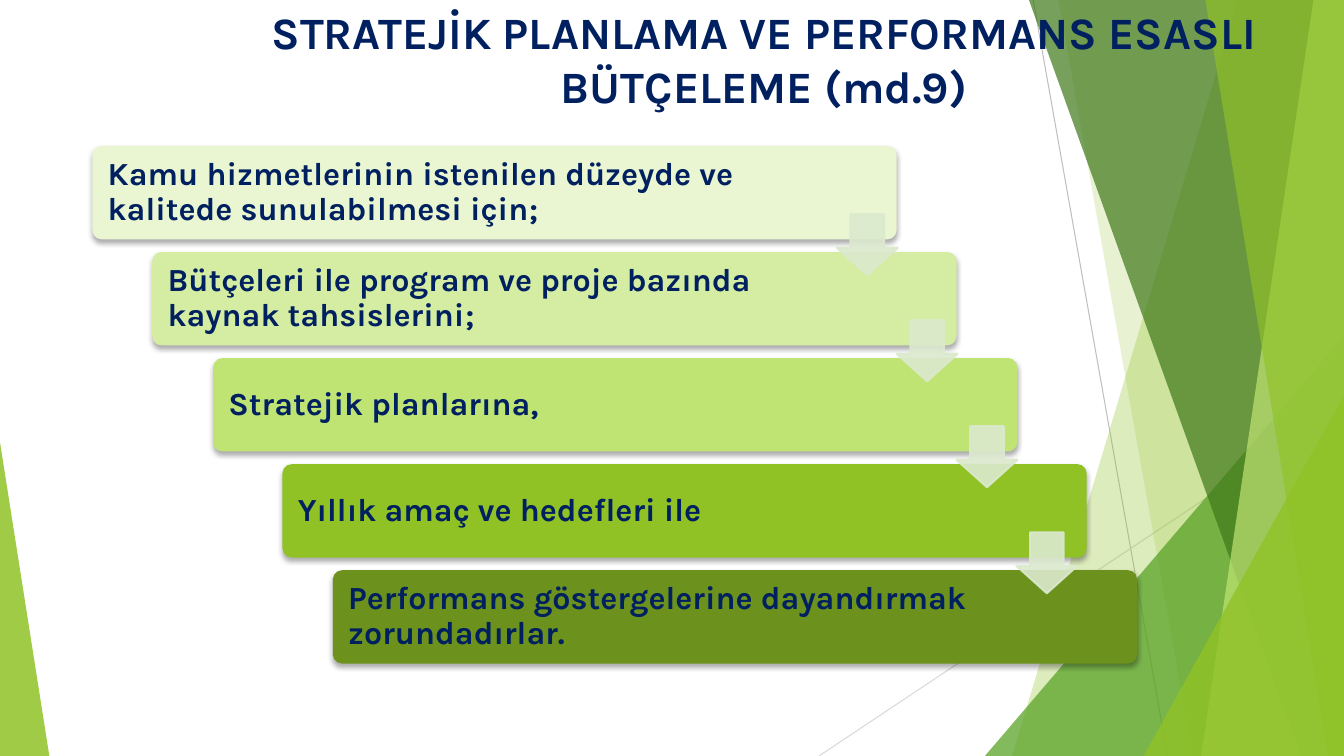
"""Build the slide on strategic planning and performance-based budgeting."""
from lxml import etree
from pptx import Presentation
from pptx.dml.color import RGBColor
from pptx.enum.shapes import MSO_CONNECTOR, MSO_SHAPE
from pptx.enum.text import MSO_ANCHOR, MSO_AUTO_SIZE, PP_ALIGN
from pptx.oxml.ns import qn
from pptx.util import Pt

PX = 9525
WIDTH, HEIGHT = 1280, 720
FONT = "Karla"
STRAIGHT = MSO_CONNECTOR.STRAIGHT
TRIANGLE = MSO_SHAPE.ISOSCELES_TRIANGLE
ROUNDED = MSO_SHAPE.ROUNDED_RECTANGLE
DOWN_ARROW = MSO_SHAPE.DOWN_ARROW
TOP, MIDDLE = MSO_ANCHOR.TOP, MSO_ANCHOR.MIDDLE
LEFT, CENTER = PP_ALIGN.LEFT, PP_ALIGN.CENTER
FIXED = MSO_AUTO_SIZE.NONE

COLORS = {
    "navy": "002060", "gray": "BFBFBF", "silver": "D9D9D9", "black": "000000",
    "lime": "90C226", "green": "54A021", "forest": "3F7819", "arrow": "DBE9CD",
    "pale": "EAF6D1", "light": "D5EDA2", "soft": "C0E474", "olive": "6C921D",
}

TITLE = "STRATEJİK PLANLAMA VE PERFORMANS ESASLI BÜTÇELEME (md.9)"
STEPS = [
    ("Kamu hizmetlerinin istenilen düzeyde ve kalitede sunulabilmesi için;", 88, "pale"),
    ("Bütçeleri ile program ve proje bazında kaynak tahsislerini;", 145, "light"),
    ("Stratejik planlarına,", 203, "soft"),
    ("Yıllık amaç ve hedefleri ile", 269, "lime"),
    ("Performans göstergelerine dayandırmak zorundadırlar.", 317, "olive"),
]
STEP_TOP, STEP_WIDTH, STEP_HEIGHT, STEP_PITCH = 139, 766, 89, 101
TEXT_INSET, TEXT_WIDTH = 12, 627
ARROW_LEFT, ARROW_TOP, ARROW_SIZE, ARROW_SHIFT = 797, 204, 58, 57

THIN_LINES = [((984, 0), (1112, 720), "gray"), ((1280, 387), (780, 720), "silver")]
BACKDROP = [
    ("band", (1179, 964), "lime", 30),
    ("band", (1008, 1136), "lime", 20),
    ("triangle", (938, 320, 342, 400, 1), "green", 72),
    ("band", (980, 1239), "forest", 70),
    ("band", (1251, 1144), "soft", 70),
    ("band", (1148, 1265), "lime", 65),
    ("triangle", (1089, 377, 191, 343, 1), "lime", 80),
    ("triangle", (0, 421, 47, 299, 0), "lime", 85),
]


def rgb(name):
    return RGBColor.from_string(COLORS[name])


def scaled(*lengths):
    return [length * PX for length in lengths]


def set_opacity(shape, percent):
    for color in shape.element.spPr.iter(qn("a:srgbClr")):
        etree.SubElement(color, qn("a:alpha"), val=str(percent * 1000))


def paint(shape, color):
    shape.shadow.inherit = False
    shape.fill.solid()
    shape.fill.fore_color.rgb = rgb(color)
    shape.line.fill.background()


def add_preset(page, kind, bounds, color, adjustments):
    shape = page.shapes.add_shape(kind, *scaled(*bounds))
    for index, value in enumerate(adjustments):
        shape.adjustments[index] = value
    paint(shape, color)
    return shape


def add_thin_line(page, start, end, color):
    line = page.shapes.add_connector(STRAIGHT, *scaled(*start, *end))
    line.line.color.rgb = rgb(color)
    line.line.width = Pt(0.75)
    etree.SubElement(line.element.spPr, qn("a:effectLst"))


def add_band(page, top_x, bottom_x, color):
    builder = page.shapes.build_freeform(top_x, 0, scale=PX)
    builder.add_line_segments([(WIDTH, 0), (WIDTH, HEIGHT), (bottom_x, HEIGHT)])
    band = builder.convert_to_shape()
    paint(band, color)
    return band


def add_shadow(shape):
    effects = shape.element.spPr.find(qn("a:effectLst"))
    shadow = etree.SubElement(effects, qn("a:outerShdw"), blurRad=str(Pt(3.5)),
                              dist=str(Pt(2.2)), dir="5400000", rotWithShape="0")
    color = etree.SubElement(shadow, qn("a:srgbClr"), val=COLORS["black"])
    etree.SubElement(color, qn("a:alpha"), val="32000")


def write(frame, text, size, align, anchor):
    frame.word_wrap = True
    frame.auto_size = FIXED
    frame.vertical_anchor = anchor
    para = frame.paragraphs[0]
    para.alignment = align
    span = para.add_run()
    span.text = text
    span.font.name = FONT
    span.font.size = Pt(size)
    span.font.bold = True
    span.font.color.rgb = rgb("navy")
    return para


def add_backdrop(page):
    for start, end, color in THIN_LINES:
        add_thin_line(page, start, end, color)
    for kind, geometry, color, opacity in BACKDROP:
        if kind == "band":
            shape = add_band(page, *geometry, color)
        else:
            shape = add_preset(page, TRIANGLE, geometry[:4], color, geometry[4:])
        set_opacity(shape, opacity)


def add_title(page):
    title = page.shapes.title
    title.left, title.top, title.width, title.height = scaled(176, 0, 1104, 139)
    write(title.text_frame, TITLE, 32, CENTER, TOP)
    title.element.getparent().append(title.element)


def add_step(page, index, text, left, color):
    bounds = (left, STEP_TOP + index * STEP_PITCH, STEP_WIDTH, STEP_HEIGHT)
    box = add_preset(page, ROUNDED, bounds, color, [0.1])
    add_shadow(box)
    frame = box.text_frame
    frame.margin_left = TEXT_INSET * PX
    frame.margin_right = (STEP_WIDTH - TEXT_INSET - TEXT_WIDTH) * PX
    para = write(frame, text, 23, LEFT, MIDDLE)
    para.line_spacing = 0.9


def add_arrow(page, index):
    bounds = (ARROW_LEFT + index * ARROW_SHIFT, ARROW_TOP + index * STEP_PITCH,
              ARROW_SIZE, ARROW_SIZE)
    arrow = add_preset(page, DOWN_ARROW, bounds, "arrow", [0.55, 0.45])
    arrow.line.color.rgb = rgb("arrow")
    arrow.line.width = Pt(1.5)
    set_opacity(arrow, 90)


def main():
    deck = Presentation()
    deck.slide_width, deck.slide_height = scaled(WIDTH, HEIGHT)
    page = deck.slides.add_slide(deck.slide_layouts[5])
    add_backdrop(page)
    add_title(page)
    for index, step in enumerate(STEPS):
        add_step(page, index, *step)
    for index in range(len(STEPS) - 1):
        add_arrow(page, index)
    deck.save("out.pptx")


if __name__ == "__main__":
    main()
